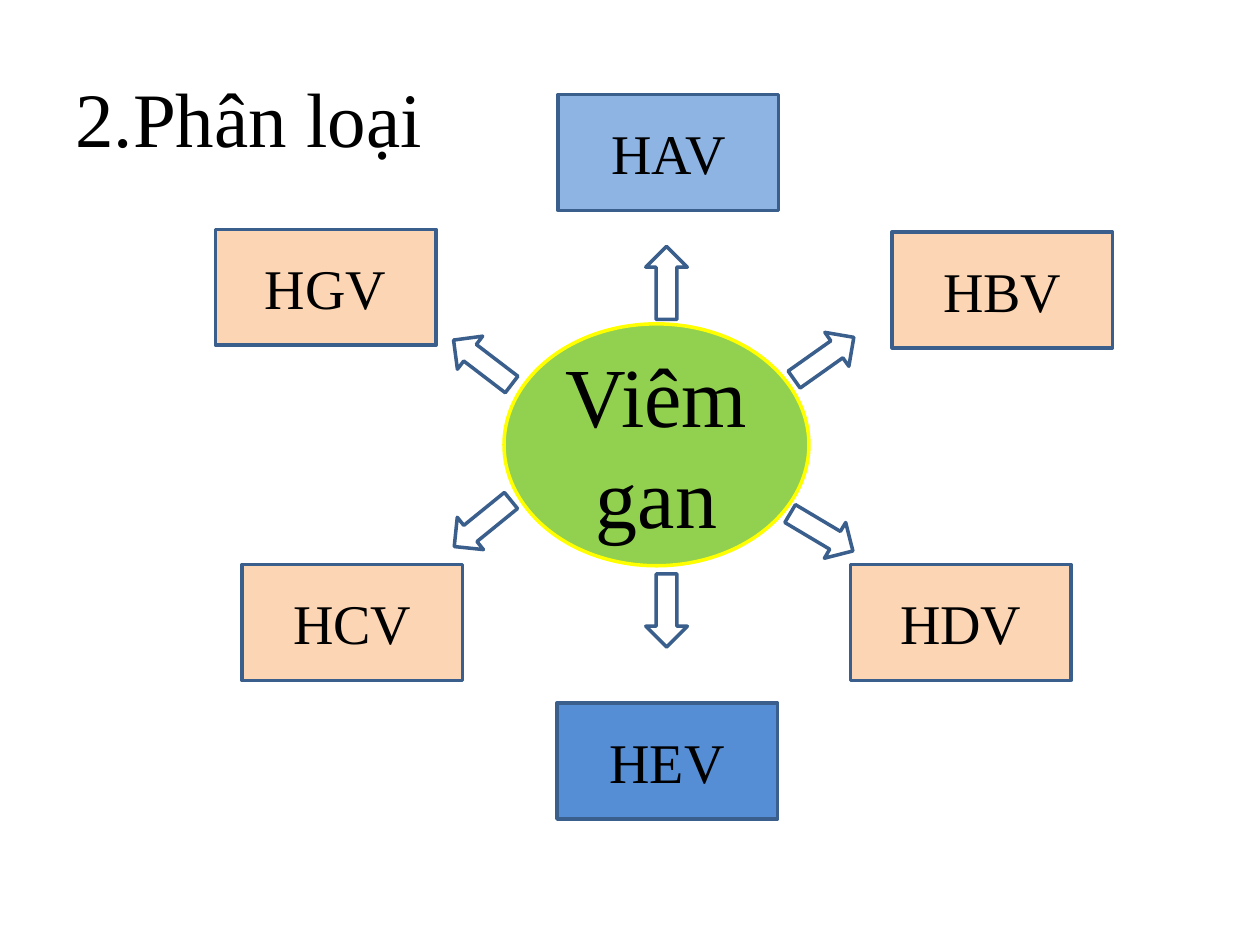
from pptx import Presentation
from pptx.dml.color import RGBColor
from pptx.enum.shapes import MSO_SHAPE as SHAPE
from pptx.enum.text import MSO_ANCHOR as ANCHOR, PP_ALIGN as ALIGN
from pptx.util import Inches, Pt

FONT = "Times New Roman"
BLACK = RGBColor(0x00, 0x00, 0x00)
WHITE = RGBColor(0xFF, 0xFF, 0xFF)
GREEN = RGBColor(0x92, 0xD0, 0x50)
YELLOW = RGBColor(0xFF, 0xFF, 0x00)
NAVY = RGBColor(0x3A, 0x5F, 0x8C)
PEACH = RGBColor(0xFC, 0xD5, 0xB5)
LIGHT_BLUE = RGBColor(0x8E, 0xB4, 0xE3)
MID_BLUE = RGBColor(0x55, 0x8E, 0xD5)

VIRUS_SIZE = (1.75, 0.92)
ARROW_SIZE = (0.58, 0.33)

VIRUSES = [
    ("HAV", (4.43, 0.75), LIGHT_BLUE, (5, 2.08), 270),
    ("HBV", (7.08, 1.84), PEACH, (6.25, 2.68), 324.7),
    ("HDV", (6.75, 4.48), PEACH, (6.23, 4.06), 30.8),
    ("HEV", (4.42, 5.58), MID_BLUE, (5, 4.68), 90),
    ("HCV", (1.92, 4.48), PEACH, (3.54, 3.99), 140.9),
    ("HGV", (1.71, 1.82), PEACH, (3.54, 2.71), 217.4),
]


def write_text(sp, text, size, align=ALIGN.CENTER, color=BLACK):
    tf = sp.text_frame
    tf.word_wrap = True
    tf.vertical_anchor = ANCHOR.MIDDLE
    p = tf.paragraphs[0]
    p.alignment = align
    r = p.add_run()
    r.text = text
    r.font.name = FONT
    r.font.size = Pt(size)
    r.font.color.rgb = color


def add_shape(s, kind, box, fill, line=NAVY):
    sp = s.shapes.add_shape(kind, *map(Inches, box))
    sp.shadow.inherit = False
    sp.fill.solid()
    sp.fill.fore_color.rgb = fill
    sp.line.color.rgb = line
    sp.line.width = Pt(2)
    return sp


def add_title(s, box, text):
    sp = s.shapes.add_textbox(*map(Inches, box))
    write_text(sp, text, 44, align=ALIGN.LEFT)


def add_hub(s, box, text):
    sp = add_shape(s, SHAPE.OVAL, box, GREEN, line=YELLOW)
    write_text(sp, text, 48)


def add_virus(s, box, text, fill):
    sp = add_shape(s, SHAPE.RECTANGLE, box, fill)
    write_text(sp, text, 32)


def add_arrow(s, box, angle):
    sp = add_shape(s, SHAPE.RIGHT_ARROW, box, WHITE)
    sp.rotation = angle


def main():
    prs = Presentation()
    prs.slide_width, prs.slide_height = Inches(10), Inches(7.5)
    s = prs.slides.add_slide(prs.slide_layouts[6])
    add_title(s, (0.5, 0.3, 9, 1.25), "2.Phân loại")
    add_hub(s, (4, 2.57, 2.42, 1.92), "Viêm gan")
    for name, corner, fill, arrow_corner, angle in VIRUSES:
        add_virus(s, corner + VIRUS_SIZE, name, fill)
        add_arrow(s, arrow_corner + ARROW_SIZE, angle)
    prs.save("out.pptx")


if __name__ == "__main__":
    main()
